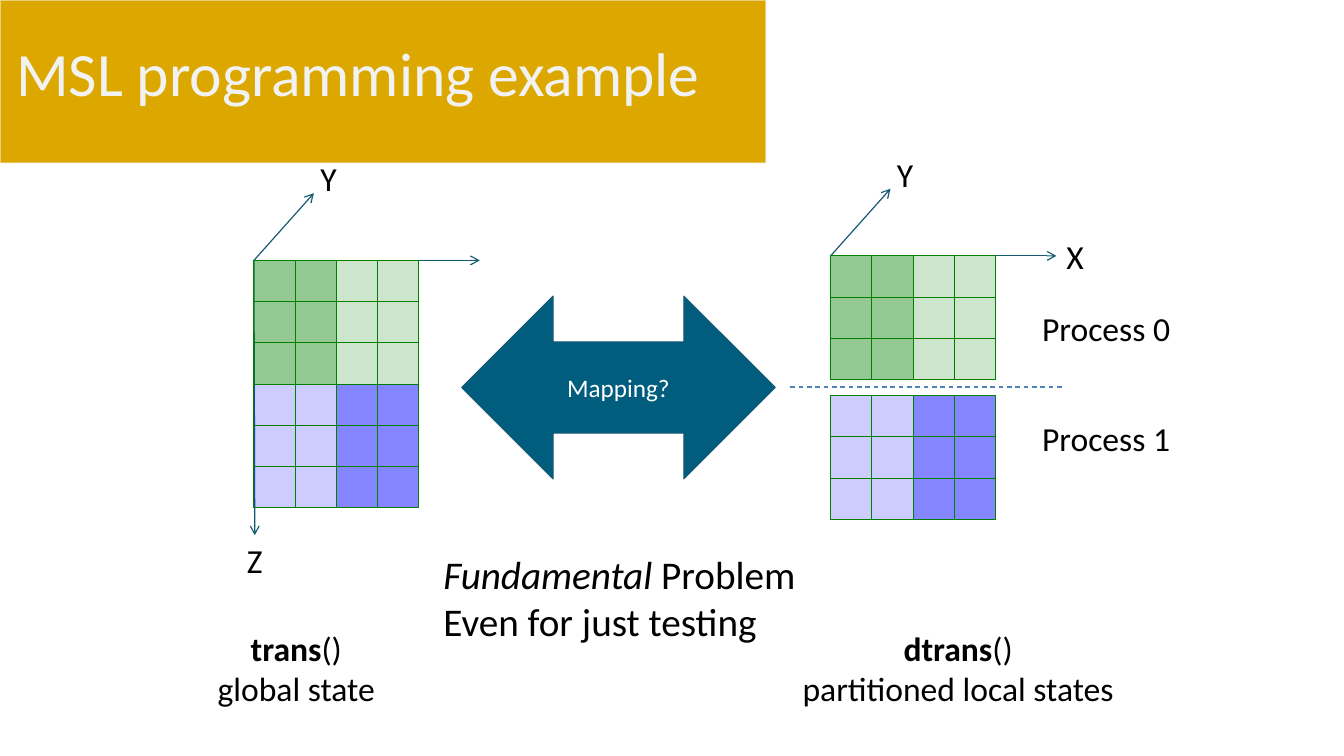
"""Builds the slide that maps a global state grid to partitioned local states."""
from pptx import Presentation
from pptx.dml.color import RGBColor
from pptx.enum.dml import MSO_LINE_DASH_STYLE as Dash
from pptx.enum.shapes import MSO_CONNECTOR as Connector, MSO_SHAPE as Shape
from pptx.enum.text import MSO_ANCHOR as Anchor, MSO_AUTO_SIZE as AutoSize, PP_ALIGN as Align
from pptx.oxml.ns import qn
from pptx.util import Pt
from lxml.etree import SubElement

GOLD = RGBColor(0xDC, 0xA8, 0x00)
BANNER_EDGE = RGBColor(0xF9, 0xF9, 0xF9)
TITLE_GREY = RGBColor(0xF2, 0xF2, 0xF2)
GREEN = RGBColor(0x00, 0x80, 0x00)
BLUE = RGBColor(0x00, 0x00, 0xFF)
TEAL = RGBColor(0x00, 0x5D, 0x7D)
AXIS_TEAL = RGBColor(0x17, 0x5B, 0x73)
DIVIDER_BLUE = RGBColor(0x4F, 0x81, 0xBD)
BLACK = RGBColor(0x00, 0x00, 0x00)
WHITE = RGBColor(0xFF, 0xFF, 0xFF)

FONT = "Calibri"
CELL = 29.45
COLUMNS = 4
ROWS = 3


def set_alpha(paint, percent):
    """Make a solid fill or line partly transparent."""
    color = next(paint.iter(qn("a:srgbClr")))
    SubElement(color, qn("a:alpha")).set("val", str(percent * 1000))


def write(frame, paragraphs, size, color, align=Align.LEFT):
    """Write paragraphs, each a list of (text, bold, italic) runs."""
    for index, runs in enumerate(paragraphs):
        paragraph = frame.paragraphs[0] if index == 0 else frame.add_paragraph()
        paragraph.alignment = align
        for text, bold, italic in runs:
            run = paragraph.add_run()
            run.text = text
            run.font.name, run.font.size = FONT, Pt(size)
            run.font.bold, run.font.italic = bold, italic
            run.font.color.rgb = color


def plain(text):
    """Return one paragraph holding a single regular run."""
    return [(text, False, False)]


def add_label(slide, box, paragraphs, size=24, align=Align.LEFT, wrap=True):
    """Add a black text box."""
    frame = slide.shapes.add_textbox(*map(Pt, box)).text_frame
    frame.word_wrap = wrap
    frame.auto_size = AutoSize.SHAPE_TO_FIT_TEXT
    write(frame, paragraphs, size, BLACK, align)


def add_block(slide, kind, box, fill, edge, edge_width=0.75):
    """Add a filled and outlined preset shape."""
    block = slide.shapes.add_shape(kind, *map(Pt, box))
    block.shadow.inherit = False
    block.fill.solid()
    block.fill.fore_color.rgb = fill
    block.line.color.rgb = edge
    block.line.width = Pt(edge_width)
    return block


def add_line(slide, start, end, color=AXIS_TEAL):
    """Add a thin straight line."""
    line = slide.shapes.add_connector(Connector.STRAIGHT, *map(Pt, start + end))
    line.line.color.rgb = color
    line.line.width = Pt(0.85)
    SubElement(line._element.spPr, qn("a:effectLst"))
    return line


def add_axis(slide, start, end):
    """Add a line that ends in an open arrowhead."""
    axis = add_line(slide, start, end)
    SubElement(axis.line._get_or_add_ln(), qn("a:tailEnd")).set("type", "arrow")


def add_axes(slide, left, top):
    """Add the X and Y axes that start at a grid corner."""
    add_axis(slide, (left, top), (left + 161.3, top))
    add_axis(slide, (left, top), (left + 42.8, top - 48))
    add_label(slide, (left + 40.3, top - 76.6, 27.4, 36), [plain("Y")], wrap=False)


def add_half_grid(slide, left, top, color, alphas):
    """Add half a grid whose left and right column pairs differ in opacity."""
    for row in range(ROWS):
        for column in range(COLUMNS):
            box = (left + column * CELL, top + row * CELL, CELL, CELL)
            cell = add_block(slide, Shape.RECTANGLE, box, color, GREEN)
            set_alpha(cell._element.spPr.find(qn("a:solidFill")), alphas[column * 2 // COLUMNS])


def add_title(slide):
    """Add the gold banner with the title on top of it."""
    banner = add_block(slide, Shape.FLOWCHART_PROCESS, (0, 0, 547.2, 116.6),
                       GOLD, BANNER_EDGE, 1.35)
    set_alpha(banner.line._get_or_add_ln(), 50)
    title = slide.shapes.title
    banner._element.addnext(title._element)
    title.left, title.top, title.width, title.height = map(Pt, (4.3, 2.2, 540.7, 104.4))
    title.text_frame.vertical_anchor = Anchor.MIDDLE
    title.text_frame.word_wrap = True
    write(title.text_frame, [plain("MSL programming example")], 44, TITLE_GREY)
    title.text_frame.paragraphs[0].line_spacing = 0.9


def add_state(slide, left, top, gap):
    """Add axes and a green half over a blue half, set apart by a gap."""
    add_axes(slide, left, top)
    add_half_grid(slide, left, top, GREEN, (42, 20))
    add_half_grid(slide, left, top + ROWS * CELL + gap, BLUE, (20, 48))


def add_caption(slide, box, function, description):
    """Add a centred function name above its description."""
    heading = [(function, True, False), ("()", False, False)]
    add_label(slide, box, [heading, plain(description)], align=Align.CENTER)


def add_mapping(slide):
    """Add the double arrow between the two states."""
    arrow = add_block(slide, Shape.LEFT_RIGHT_ARROW, (329.8, 211.5, 224, 130.6), TEAL, AXIS_TEAL)
    arrow.text_frame.vertical_anchor = Anchor.MIDDLE
    write(arrow.text_frame, [plain("Mapping?")], 18, WHITE, Align.CENTER)


def main():
    """Build and save the slide."""
    deck = Presentation()
    deck.slide_width, deck.slide_height = Pt(960), Pt(540)
    slide = deck.slides.add_slide(deck.slide_layouts[5])
    add_title(slide)

    add_axis(slide, (181.4, 186), (182, 382.3))
    add_state(slide, 181.4, 186, 0)
    add_label(slide, (169.2, 382.3, 25.9, 36), [plain("Z")], wrap=False)

    add_state(slide, 593.3, 182.8, 11.5)
    add_label(slide, (754.6, 164.9, 27.4, 36), [plain("X")], wrap=False)
    divider = add_line(slide, (564.5, 276.5), (759.6, 276.5), DIVIDER_BLUE)
    divider.line.dash_style = Dash.DASH
    for process, top in enumerate((216.7, 295.2)):
        add_label(slide, (737.3, top, 117.4, 36), [plain(f"Process {process}")])

    add_caption(slide, (137.5, 445, 148.3, 65.5), "trans", "global state")
    add_caption(slide, (564.5, 445, 239.8, 65.5), "dtrans", "partitioned local states")
    add_mapping(slide)
    problem = [("Fundamental", False, True), (" Problem", False, False)]
    add_label(slide, (309.6, 389.5, 306.7, 74.9),
              [problem, plain("Even for just testing")], size=28)
    deck.save("out.pptx")


if __name__ == "__main__":
    main()
